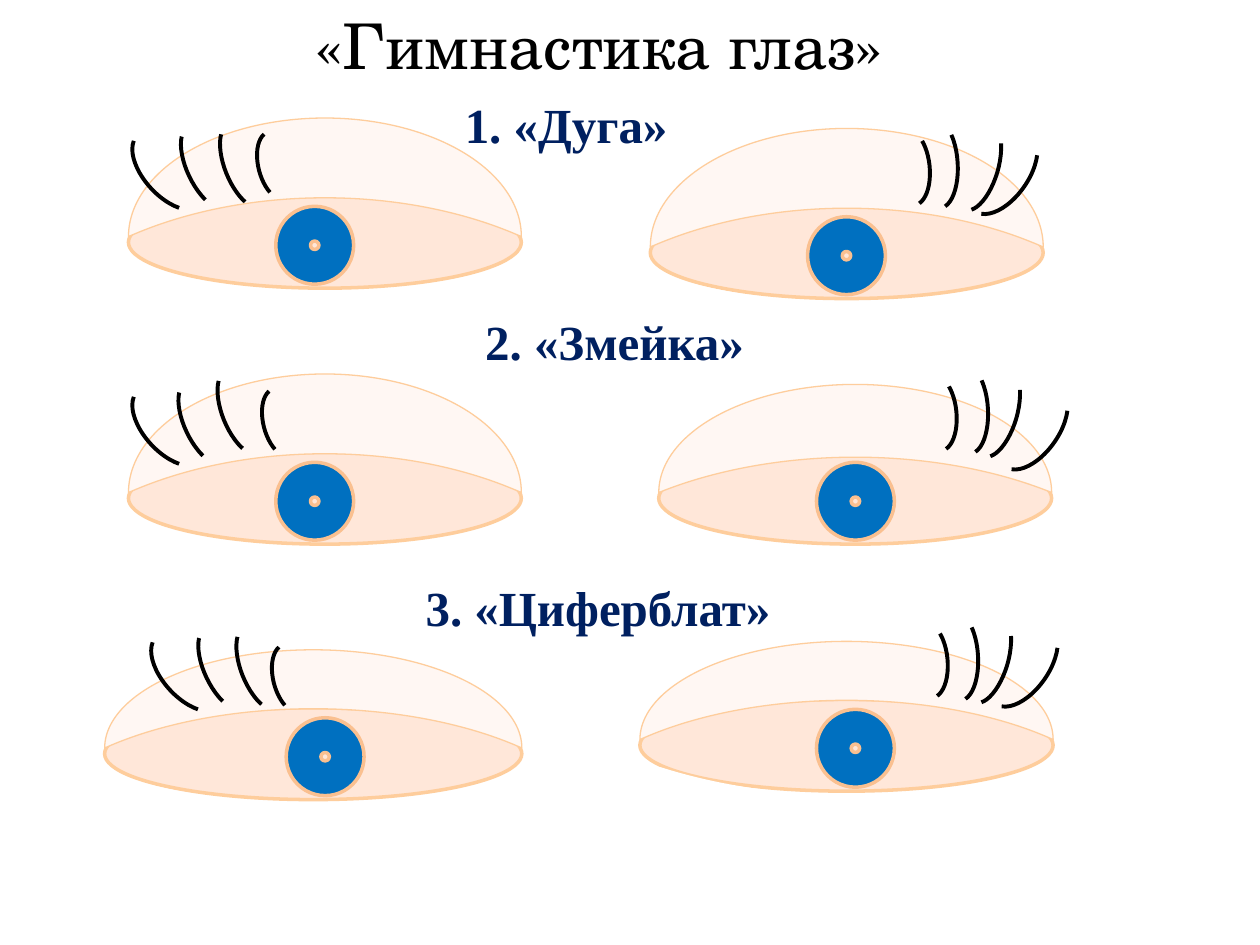
from collections import namedtuple

from pptx import Presentation
from pptx.dml.color import RGBColor
from pptx.enum import shapes, text
from pptx.util import Cm, Pt

WHITE = RGBColor(0xFF, 0xFF, 0xFF)
BLACK = RGBColor(0x00, 0x00, 0x00)
NAVY = RGBColor(0x00, 0x20, 0x60)
IRIS_BLUE = RGBColor(0x00, 0x70, 0xC0)
IRIS_EDGE = RGBColor(0xFA, 0xC0, 0x90)
SKIN = RGBColor(0xFF, 0xE7, 0xD9)
SKIN_EDGE = RGBColor(0xFE, 0xCD, 0x9C)
LID = RGBColor(0xFF, 0xF7, 0xF3)

EYE_HEIGHT = 1.85
LID_BOTTOM = 0.81
IRIS_SIZE = 1.57
SOCKET_HEIGHT = 1.98

# start and end are arc adjustments, in units of 100000/60000 degree
Lash = namedtuple("Lash", "width height rotation start end", defaults=(125.27, 211.41))
LEFT_LASHES = [
    Lash(1.93, 1.04, 227.3),
    Lash(1.8, 0.81, 244.6, end=207.48),
    Lash(1.78, 0.79, 248.1, 120.55, 207.25),
    Lash(1.4, 0.74, 255.6),
]
RIGHT_LASHES = [
    Lash(1.52, 0.76, 84.2),
    Lash(1.78, 0.81, 86.5, end=212.04),
    Lash(1.83, 0.81, 106.3),
    Lash(1.93, 1.04, 125),
]

Eye = namedtuple(
    "Eye", "left top width lid_height lid_depth iris_left socket_left socket_width lashes places")
EYES = [
    Eye(2.59, 3.96, 7.92, 2.39, 0.673, 5.56, 2.59, 7.92, LEFT_LASHES,
        [(2.46, 2.92), (3.28, 2.97), (4.04, 2.95), (4.88, 2.97)]),
    Eye(13.11, 4.17, 7.92, 2.39, 0.673, 16.28, 13.31, 7.92, RIGHT_LASHES,
        [(17.6, 3), (18.01, 2.9), (18.8, 2.95), (19.25, 2.95)]),
    Eye(2.59, 9.12, 7.92, 2.39, 0.673, 5.56, 2.59, 7.92, LEFT_LASHES,
        [(2.46, 8.08), (3.23, 8.13), (3.99, 7.92), (4.98, 8.15)]),
    Eye(13.28, 9.12, 7.92, 2.18, 0.673, 16.46, 13.31, 7.92, RIGHT_LASHES,
        [(18.14, 7.95), (18.62, 7.85), (19.18, 7.92), (19.86, 8.1)]),
    Eye(2.11, 14.27, 8.41, 1.98, 0.6, 5.77, 2.34, 8.18, LEFT_LASHES,
        [(2.84, 13.03), (3.63, 13.08), (4.37, 13.08), (5.18, 13.31)]),
    Eye(12.9, 14.1, 8.33, 1.98, 0.6, 16.46, 13.31, 7.92, RIGHT_LASHES,
        [(17.96, 12.93), (18.42, 12.83), (19, 12.88), (19.66, 12.88)]),
]
CREASES = [(1.7, 3.45, 356.5), (11.76, 3.73, 349.8)]
HEADINGS = [
    ("1. «Дуга»", 9.12, 1.78, 4.9),
    ("2. «Змейка»", 9.53, 6.15, 6.1),
    ("3. «Циферблат»", 8.33, 11.51, 7.54),
]


def add_figure(page, kind, left, top, width, height, fill, edge, weight):
    figure = page.shapes.add_shape(kind, Cm(left), Cm(top), Cm(width), Cm(height))
    figure.shadow.inherit = False
    if fill is None:
        figure.fill.background()
    else:
        figure.fill.solid()
        figure.fill.fore_color.rgb = fill
    figure.line.color.rgb = edge
    figure.line.width = Pt(weight)
    return figure


def add_moon(page, left, top, width, height, rotation, depth, fill, edge, weight):
    """Lay a crescent on its side so that it fills the given area."""
    moon = add_figure(page, shapes.MSO_SHAPE.MOON, left + (width - height) / 2,
                      top + (height - width) / 2, height, width, fill, edge, weight)
    moon.rotation = rotation
    moon.adjustments[0] = depth


def add_arc(page, left, top, lash, edge, weight):
    arc = add_figure(page, shapes.MSO_SHAPE.ARC, left, top, lash.width, lash.height,
                     None, edge, weight)
    arc.rotation = lash.rotation
    arc.adjustments[0] = lash.start
    arc.adjustments[1] = lash.end


def add_eyeball(page, eye):
    add_figure(page, shapes.MSO_SHAPE.FLOWCHART_CONNECTOR, eye.left, eye.top,
               eye.width, EYE_HEIGHT, SKIN, SKIN_EDGE, 2)
    iris = add_figure(page, shapes.MSO_SHAPE.DONUT, eye.iris_left, eye.top + 0.2,
                      IRIS_SIZE, IRIS_SIZE, IRIS_BLUE, IRIS_EDGE, 2)
    iris.adjustments[0] = 0.446


def add_lids(page, eye):
    add_moon(page, eye.left, eye.top + LID_BOTTOM - eye.lid_height, eye.width,
             eye.lid_height, 90, eye.lid_depth, LID, SKIN_EDGE, 0.75)
    add_moon(page, eye.socket_left, eye.top + 1.4, eye.socket_width,
             SOCKET_HEIGHT, 270, 0.709, WHITE, WHITE, 2)
    for lash, (left, top) in zip(eye.lashes, eye.places):
        add_arc(page, left, top, lash, BLACK, 2.25)


def add_label(page, words, left, top, width, height, font, size, color, bold=False):
    box = page.shapes.add_textbox(Cm(left), Cm(top), Cm(width), Cm(height))
    frame = box.text_frame
    frame.word_wrap = False
    frame.auto_size = text.MSO_AUTO_SIZE.SHAPE_TO_FIT_TEXT
    para = frame.paragraphs[0]
    para.text = words
    para.font.name = font
    para.font.size = Pt(size)
    para.font.bold = bold
    para.font.color.rgb = color
    return box


def main():
    deck = Presentation()
    deck.slide_width, deck.slide_height = Cm(25.4), Cm(19.05)
    page = deck.slides.add_slide(deck.slide_layouts[6])

    for eye in EYES:
        add_eyeball(page, eye)
    for left, top, rotation in CREASES:
        add_arc(page, left, top, Lash(8.92, 3.73, rotation), SKIN_EDGE, 0.75)
    for eye in EYES:
        add_lids(page, eye)

    title = add_label(page, "«Гимнастика глаз»", 5.94, 0, 13.89, 1.8,
                      "TeX Gyre Schola", 36, BLACK)
    title.text_frame.word_wrap = True
    title.text_frame.margin_left = Cm(0.43)
    for words, left, top, width in HEADINGS:
        add_label(page, words, left, top, width, 1.45, "Times New Roman", 28, NAVY, True)

    deck.save("out.pptx")


if __name__ == "__main__":
    main()
